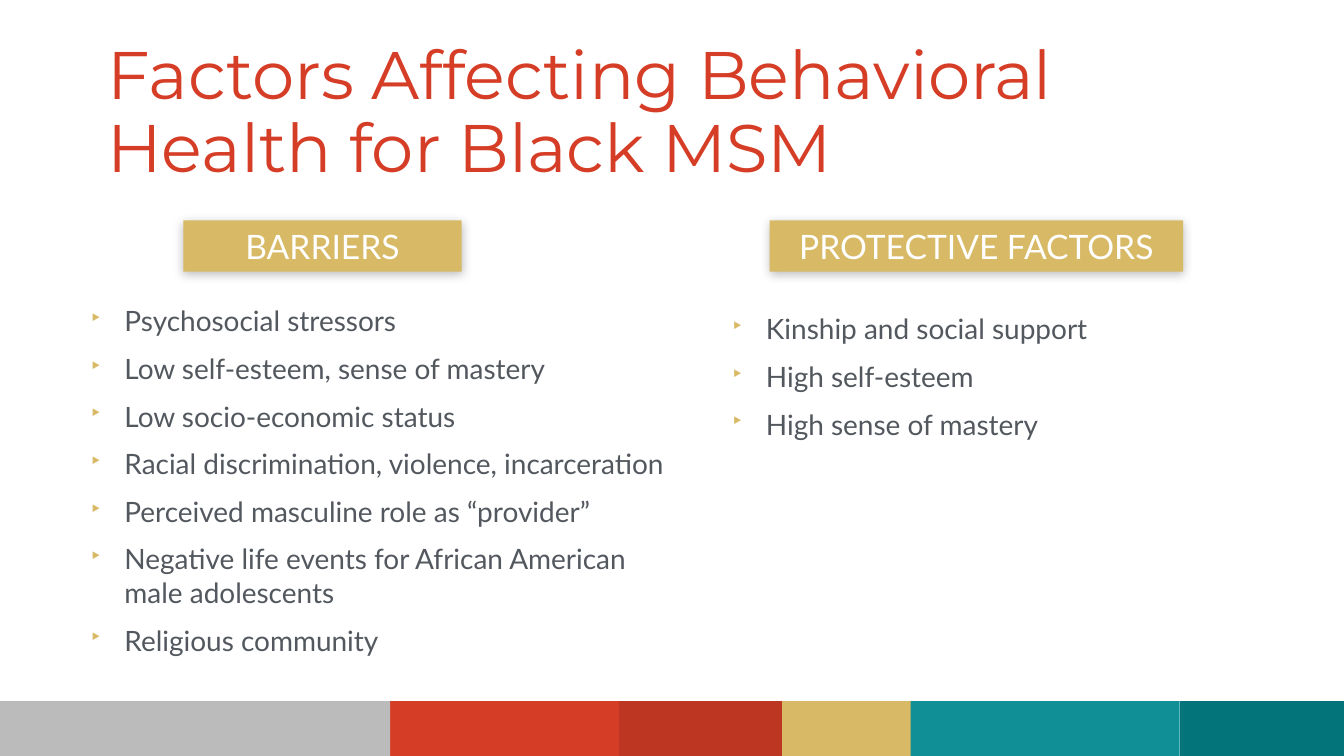
import pptx
import pptx.util
import pptx.dml.color
import pptx.enum.shapes
import pptx.enum.text
import pptx.oxml
import pptx.oxml.ns

Inches = pptx.util.Inches
Pt = pptx.util.Pt
ALIGN = pptx.enum.text.PP_ALIGN
ANCHOR = pptx.enum.text.MSO_ANCHOR

COLORS = {
    "red": "D63D26", "dark_red": "BC3621", "teal": "109096",
    "dark_teal": "037479", "gold": "D8BA66", "gray": "BCBBBB",
    "text": "53585F", "white": "FFFFFF", "black": "000000",
}

BARRIERS = [
    "Psychosocial stressors",
    "Low self-esteem, sense of mastery",
    "Low socio-economic status",
    "Racial discrimination, violence, incarceration",
    "Perceived masculine role as “provider”",
    "Negative life events for African American \vmale adolescents",
    "Religious community",
]
PROTECTIVE = [
    "Kinship and social support",
    "High self-esteem",
    "High sense of mastery",
]

# Overlapping footer blocks, back to front: left, width, colour
FOOTER = [
    (7.5, 4.96, "red"), (12.28, 3.25, "dark_red"),
    (23.42, 3.25, "dark_teal"), (17.95, 5.46, "teal"),
    (15.52, 2.55, "gold"), (0, 7.74, "gray"),
]


def rgb(name):
    return pptx.dml.color.RGBColor.from_string(COLORS[name])


def set_frame(tf, inset, anchor):
    values = {"word_wrap": True, "auto_size": pptx.enum.text.MSO_AUTO_SIZE.NONE,
              "vertical_anchor": anchor}
    for side in ("left", "top", "right", "bottom"):
        values[f"margin_{side}"] = Inches(inset)
    for name, value in values.items():
        setattr(tf, name, value)


def set_text(p, text, size, font, color, **paragraph_format):
    p.text = text
    for name, value in paragraph_format.items():
        setattr(p, name, value)
    for r in p.runs:
        for name, value in {"size": Pt(size), "name": font}.items():
            setattr(r.font, name, value)
        r.font.color.rgb = rgb(color)


def append_xml(parent, tag, content="", attributes=""):
    parent.append(pptx.oxml.parse_xml(
        f'<a:{tag} {pptx.oxml.ns.nsdecls("a")} {attributes}>{content}</a:{tag}>'))


def add_title(s, text):
    sp = s.shapes.title
    box = {"left": 2.13, "top": -0.04, "width": 22.87, "height": 4.61}
    for name, value in box.items():
        setattr(sp, name, Inches(value))
    set_frame(sp.text_frame, 0, ANCHOR.MIDDLE)
    set_text(sp.text_frame.paragraphs[0], text, 96, "Montserrat", "red",
             alignment=ALIGN.LEFT, line_spacing=0.9)


def add_bullets(s, box, items):
    tf = s.shapes.add_textbox(*map(Inches, box)).text_frame
    set_frame(tf, 0.28, ANCHOR.TOP)
    for i, item in enumerate(items):
        p = tf.add_paragraph() if i else tf.paragraphs[0]
        set_text(p, item, 40, "Lato", "text", space_before=Pt(20))
        pPr = p._p.get_or_add_pPr()
        pPr.set("marL", str(Inches(0.69)))
        pPr.set("indent", str(-Inches(0.69)))
        append_xml(pPr, "buClr", f'<a:srgbClr val="{COLORS["gold"]}"/>')
        append_xml(pPr, "buSzPct", attributes='val="75000"')
        append_xml(pPr, "buChar", attributes='char="‣"')


def add_block(s, box, color):
    sp = s.shapes.add_shape(pptx.enum.shapes.MSO_SHAPE.RECTANGLE, *map(Inches, box))
    sp.shadow.inherit = False
    sp.fill.solid()
    sp.fill.fore_color.rgb = rgb(color)
    sp.line.fill.background()
    return sp


def add_heading(s, left, width, text):
    """Add a gold column heading with a soft shadow below it."""
    sp = add_block(s, (left, 4.37, width, 1.02), "gold")
    effects = sp._element.spPr.find(pptx.oxml.ns.qn("a:effectLst"))
    append_xml(effects, "outerShdw",
               f'<a:srgbClr val="{COLORS["black"]}"><a:alpha val="25000"/></a:srgbClr>',
               f'blurRad="{Pt(15)}" dist="{Pt(4)}" dir="5400000" rotWithShape="0"')
    set_frame(sp.text_frame, 0, ANCHOR.MIDDLE)
    set_text(sp.text_frame.paragraphs[0], text, 48, "Lato", "white",
             alignment=ALIGN.CENTER)


def main():
    prs = pptx.Presentation()
    prs.slide_width, prs.slide_height = Inches(26.67), Inches(15)
    s = prs.slides.add_slide(prs.slide_layouts[5])
    add_title(s, "Factors Affecting Behavioral Health for Black MSM")
    add_bullets(s, (1.5, 5.75, 13.04, 8.57), BARRIERS)
    add_bullets(s, (14.23, 5.91, 10.29, 3.17), PROTECTIVE)
    for left, width, color in FOOTER:
        add_block(s, (left, 13.91, width, 1.1), color)
    add_heading(s, 3.64, 5.52, "BARRIERS")
    add_heading(s, 15.27, 8.21, "PROTECTIVE FACTORS")
    prs.save("out.pptx")


if __name__ == "__main__":
    main()
